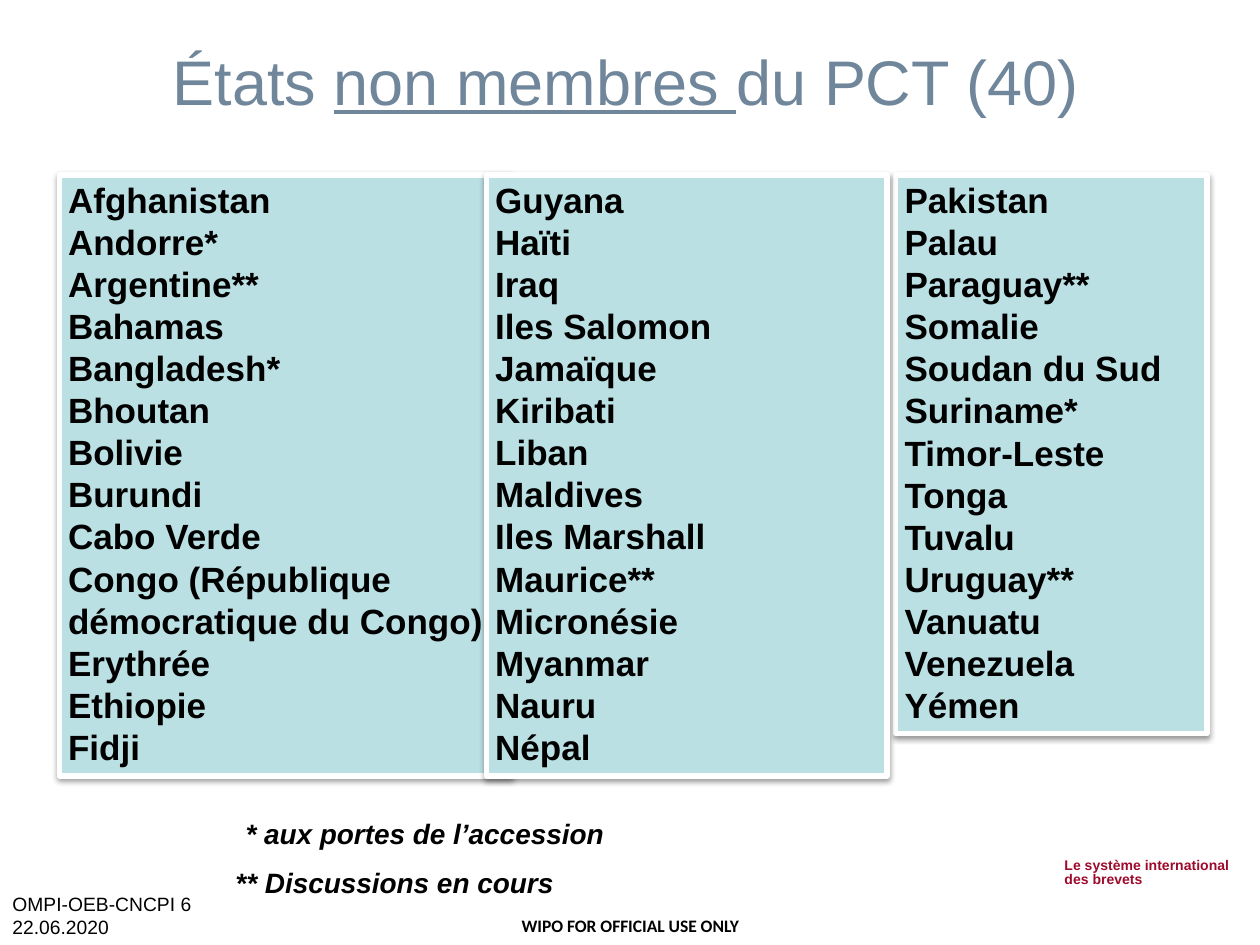
from dataclasses import dataclass

from lxml import etree
from pptx import Presentation
from pptx.dml.color import RGBColor
from pptx.enum.shapes import MSO_SHAPE
from pptx.enum.text import MSO_ANCHOR, MSO_AUTO_SIZE, PP_ALIGN
from pptx.oxml.ns import qn
from pptx.util import Inches, Pt

BLACK = RGBColor(0x00, 0x00, 0x00)
WHITE = RGBColor(0xFF, 0xFF, 0xFF)
PALE_BLUE = RGBColor(0xBB, 0xE0, 0xE3)
SLATE = RGBColor(0x70, 0x86, 0x9B)
CRIMSON = RGBColor(0x9D, 0x0A, 0x2B)

RECT = MSO_SHAPE.RECTANGLE
TOP, MIDDLE, BOTTOM = MSO_ANCHOR.TOP, MSO_ANCHOR.MIDDLE, MSO_ANCHOR.BOTTOM
LEFT, CENTER = PP_ALIGN.LEFT, PP_ALIGN.CENTER
GROW = MSO_AUTO_SIZE.SHAPE_TO_FIT_TEXT

# Slide size, and the percent grid on which everything is placed
WIDTH, HEIGHT = Inches(10), Inches(7.5)
COLUMN_TOP, ROW, COLUMN_PAD = 18.53, 4.53, 0.18


@dataclass
class Area:
    """Place in percent of the slide's width and height."""
    x: float
    y: float
    w: float
    h: float

    def emu(self) -> list[int]:
        return [int(share * side / 100) for share, side in
                zip((self.x, self.y, self.w, self.h), (WIDTH, HEIGHT) * 2)]


@dataclass
class Label:
    """Text box; underscores in the text enclose an underlined part."""
    text: str
    area: Area
    font: dict
    margins: tuple[float, float] = (0.1, 0.05)
    anchor: int = TOP
    align: int = LEFT
    spacing: float | None = None
    wrap: bool = True
    grow: bool = True


@dataclass
class Column:
    """Panel of countries, as tall as its number of lines."""
    x: float
    w: float
    lines: int
    countries: str


def font(size: float, color: RGBColor = BLACK, **extra) -> dict:
    return {"name": "Arial", "size": Pt(size), "color": color, **extra}


def write(s, label: Label) -> None:
    tf = s.text_frame
    tf.word_wrap = label.wrap
    tf.vertical_anchor = label.anchor
    if label.grow:
        tf.auto_size = GROW
    side, edge = (Inches(m) for m in label.margins)
    tf.margin_left = tf.margin_right = side
    tf.margin_top = tf.margin_bottom = edge
    for i, line in enumerate(label.text.split("\n")):
        p = tf.paragraphs[0] if i == 0 else tf.add_paragraph()
        p.alignment = label.align
        if label.spacing:
            p.line_spacing = label.spacing
        for j, part in enumerate(line.split("_")):
            r = p.add_run()
            r.text = part
            for key, value in label.font.items():
                if key == "color":
                    r.font.color.rgb = value
                else:
                    setattr(r.font, key, value)
            if j % 2:
                r.font.underline = True


def add_label(slide, label: Label) -> None:
    write(slide.shapes.add_textbox(*label.area.emu()), label)


def add_shadow(s) -> None:
    effects = etree.SubElement(s._element.spPr, qn("a:effectLst"))
    shadow = etree.SubElement(effects, qn("a:outerShdw"), blurRad="40000",
                              dist="20000", dir="5400000", rotWithShape="0")
    color = etree.SubElement(shadow, qn("a:srgbClr"), val="000000")
    etree.SubElement(color, qn("a:alpha"), val="38000")


def add_column(slide, column: Column) -> None:
    area = Area(column.x, COLUMN_TOP, column.w, column.lines * ROW + COLUMN_PAD)
    s = slide.shapes.add_shape(RECT, *area.emu())
    s.fill.solid()
    s.fill.fore_color.rgb = PALE_BLUE
    s.line.color.rgb = WHITE
    s.line.width = Pt(3)
    add_shadow(s)
    write(s, Label(column.countries, area, font(20, bold=True), (0.07, 0.03)))


# Footer parts and title
HEADINGS = [
    Label("Le système international\ndes brevets", Area(83.5, 90.27, 15.4, 4.4),
          font(8, CRIMSON, bold=True), spacing=0.85, wrap=False),
    Label("OMPI-OEB-CNCPI 6\n22.06.2020", Area(0, 92, 28, 8), font(11),
          anchor=BOTTOM, grow=False),
    Label("WIPO FOR OFFICIAL USE ONLY", Area(41.4, 96.8, 17.7, 2.27),
          font(10, bold=True) | {"name": "Calibri"}, (0, 0)),
    Label("États _non membres _du PCT (40)", Area(2.9, 3.87, 93.5, 9.2),
          font(36, SLATE), (0.09, 0.05), MIDDLE, CENTER),
]

# Country panels, from back to front: the middle one overlaps the first
COLUMNS = [
    Column(4.7, 35.9, 14, """Afghanistan
Andorre*
Argentine**
Bahamas
Bangladesh*
Bhoutan
Bolivie
Burundi
Cabo Verde
Congo (République démocratique du Congo)
Erythrée
Ethiopie
Fidji"""),
    Column(71.1, 24.7, 13, """Pakistan
Palau
Paraguay**
Somalie
Soudan du Sud
Suriname*
Timor-Leste
Tonga
Tuvalu
Uruguay**
Vanuatu
Venezuela
Yémen"""),
    Column(38.6, 31.8, 14, """Guyana
Haïti
Iraq
Iles Salomon
Jamaïque
Kiribati
Liban
Maldives
Iles Marshall
Maurice**
Micronésie
Myanmar
Nauru
Népal"""),
]

# Key to the asterisks
NOTE_FONT = font(16, bold=True, italic=True)
NOTES = [
    Label("* aux portes de l’accession", Area(18.5, 85.73, 44.9, 4.93), NOTE_FONT),
    Label("** Discussions en cours", Area(17.7, 90.93, 44.1, 4.93), NOTE_FONT),
]


def main() -> None:
    prs = Presentation()
    prs.slide_width, prs.slide_height = WIDTH, HEIGHT
    slide = prs.slides.add_slide(prs.slide_layouts[6])
    for heading in HEADINGS:
        add_label(slide, heading)
    for column in COLUMNS:
        add_column(slide, column)
    for note in NOTES:
        add_label(slide, note)
    prs.save("out.pptx")


if __name__ == "__main__":
    main()
